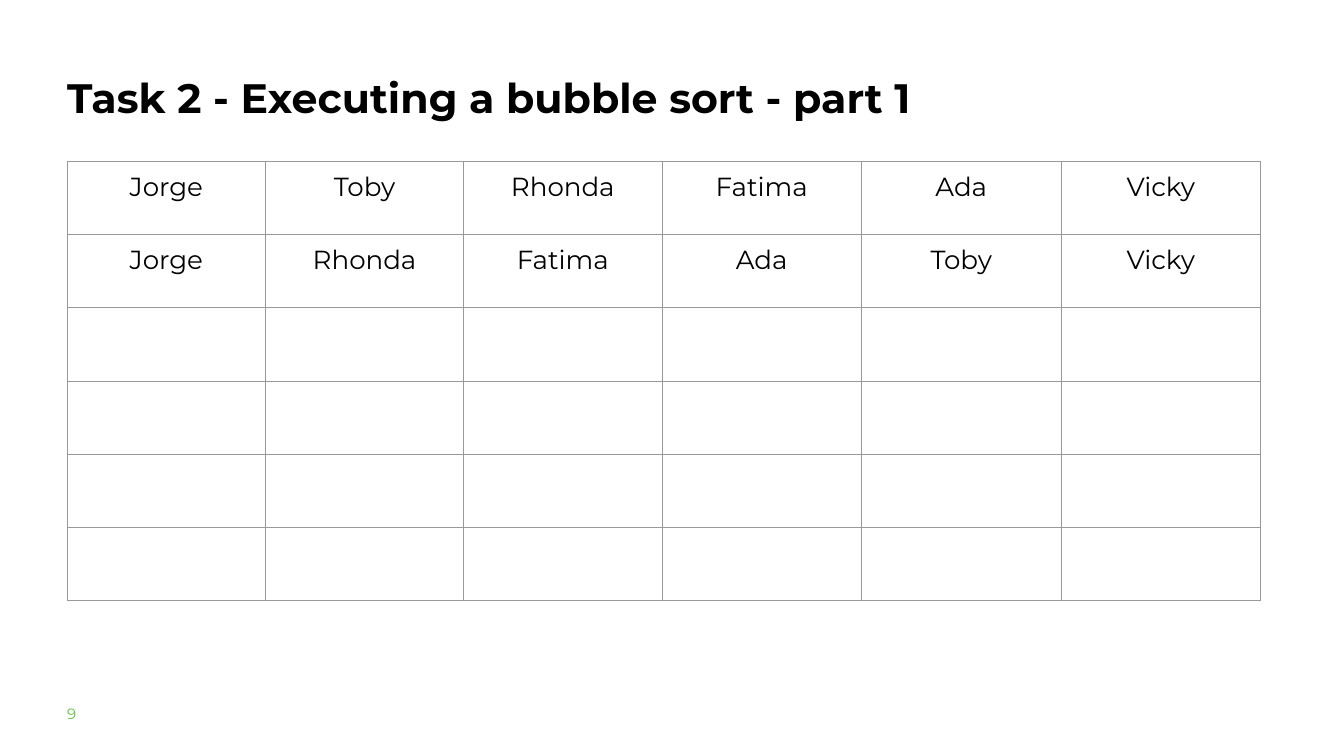
from lxml import etree
from pptx import Presentation
from pptx.dml.color import RGBColor
from pptx.enum.text import PP_ALIGN
from pptx.oxml.ns import qn
from pptx.util import Inches, Pt

CENTER = PP_ALIGN.CENTER
LEFT = PP_ALIGN.LEFT
BLACK = RGBColor(0x00, 0x00, 0x00)
WHITE = RGBColor(0xFF, 0xFF, 0xFF)
GREEN = RGBColor(0x65, 0xBE, 0x4B)
GRAY = RGBColor(0x99, 0x99, 0x99)

ROW_COUNT = 6
ROW_HEIGHT = 1.09
COLUMN_WIDTHS = [2.95] * 3 + [2.97] * 3
PASSES = [
    ["Jorge", "Toby", "Rhonda", "Fatima", "Ada", "Vicky"],
    ["Jorge", "Rhonda", "Fatima", "Ada", "Toby", "Vicky"],
]


class SlideBuilder:
    font = "Montserrat"
    line_spacing = 1.15
    cell_margin = Inches(0.07)

    def __init__(self, slide):
        self.s = slide

    def format(self, p, size, color, bold=False, align=LEFT):
        p.alignment = align
        for r in p.runs:
            r.font.name = self.font
            r.font.size = Pt(size)
            r.font.bold = bold
            r.font.color.rgb = color

    def text(self, x, y, w, h, text, size, color, bold=False, spacing=None):
        sp = self.s.shapes.add_textbox(Inches(x), Inches(y), Inches(w), Inches(h))
        tf = sp.text_frame
        tf.word_wrap = True
        tf.margin_left = tf.margin_right = tf.margin_top = tf.margin_bottom = 0
        tf.text = text
        p = tf.paragraphs[0]
        p.line_spacing = spacing
        self.format(p, size, color, bold)

    def borders(self, cell):
        tcPr = cell._tc.get_or_add_tcPr()
        for side in ("a:lnL", "a:lnR", "a:lnT", "a:lnB"):
            ln = etree.SubElement(tcPr, qn(side), w=str(Pt(1)))
            fill = etree.SubElement(ln, qn("a:solidFill"))
            etree.SubElement(fill, qn("a:srgbClr"), val=str(GRAY))

    def cell(self, cell, text):
        cell.margin_left = cell.margin_right = self.cell_margin
        cell.margin_top = cell.margin_bottom = self.cell_margin
        self.borders(cell)
        cell.fill.solid()
        cell.fill.fore_color.rgb = WHITE
        if text:
            cell.text = text
            p = cell.text_frame.paragraphs[0]
            p.line_spacing = self.line_spacing
            p.space_after = Pt(12)
            self.format(p, 28, BLACK, align=CENTER)

    def table(self, x, y, widths, row_count, row_height, rows):
        frame = self.s.shapes.add_table(
            row_count, len(widths), Inches(x), Inches(y),
            Inches(sum(widths)), Inches(row_count * row_height))
        table = frame.table
        table.first_row = False
        table.horz_banding = False
        for column, width in zip(table.columns, widths):
            column.width = Inches(width)
        for i, row in enumerate(table.rows):
            row.height = Inches(row_height)
            for j, cell in enumerate(row.cells):
                self.cell(cell, rows[i][j] if i < len(rows) else "")


def main():
    prs = Presentation()
    prs.slide_width = Inches(20)
    prs.slide_height = Inches(11.25)
    s = prs.slides.add_slide(prs.slide_layouts[6])
    s.background.fill.solid()
    s.background.fill.fore_color.rgb = WHITE

    builder = SlideBuilder(s)
    builder.text(1, 10.48, 1.57, 0.39, "9", 16, GREEN)
    builder.text(1, 0.97, 14.07, 1.78, "Task 2 - Executing a bubble sort - part 1",
                 44, BLACK, bold=True, spacing=builder.line_spacing)
    builder.table(1, 2.4, COLUMN_WIDTHS, ROW_COUNT, ROW_HEIGHT, PASSES)
    prs.save("out.pptx")


if __name__ == "__main__":
    main()
